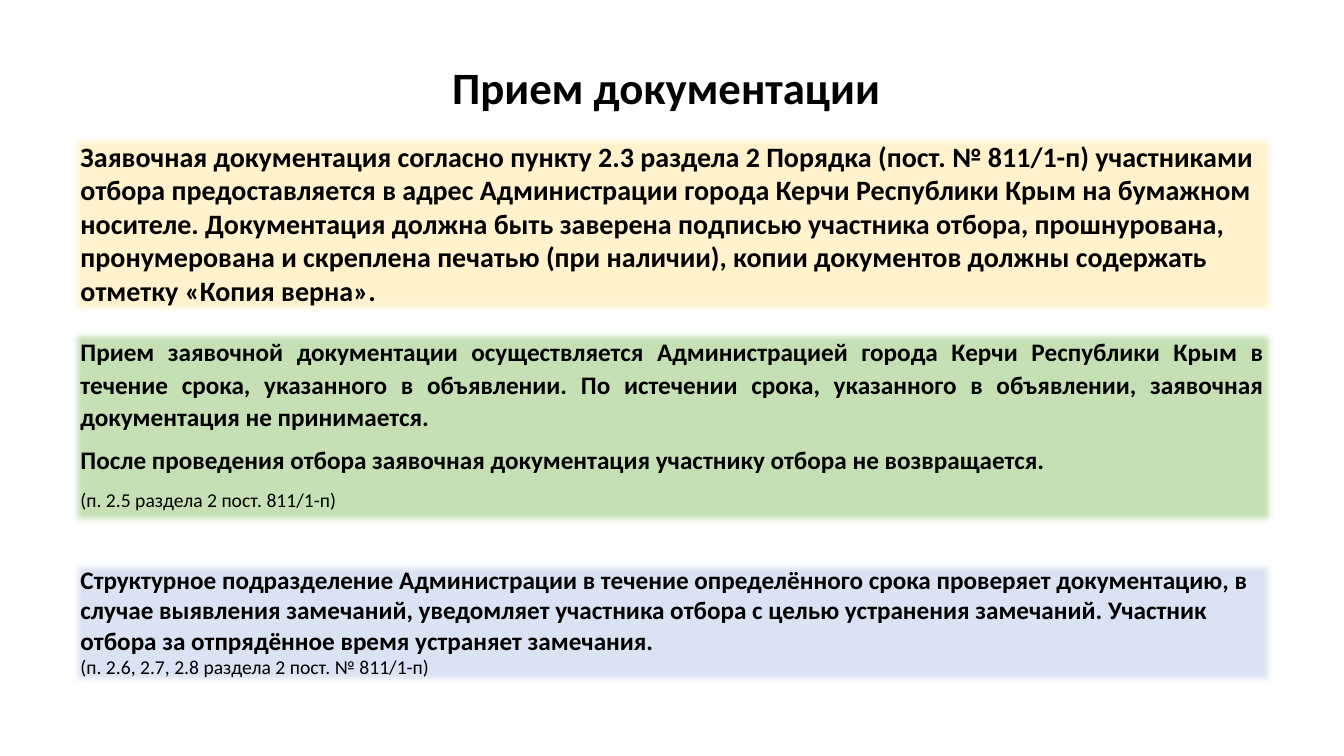
import pptx
import pptx.util
import pptx.dml.color
import pptx.enum.shapes
import pptx.enum.text
import pptx.oxml
import pptx.oxml.ns

Pt = pptx.util.Pt
ALIGN = pptx.enum.text.PP_ALIGN
COLORS = {
    "text": "000000",
    "submission": "FFF2CC",
    "deadline": "C5E0B4",
    "review": "DAE3F3",
}
PANEL_LEFT, PANEL_WIDTH = 50.4, 859.7
SOFT_EDGE = 5
PLAIN = {"line_spacing": 1.0, "space_before": Pt(0), "space_after": Pt(0),
         "alignment": ALIGN.LEFT}
SPACED = {**PLAIN, "line_spacing": 1.07, "space_after": Pt(8)}
JUSTIFIED = {**SPACED, "alignment": ALIGN.JUSTIFY}
CENTERED = {**PLAIN, "alignment": ALIGN.CENTER}

PANELS = [
    ("submission", 95.8, 128.2, [
        ("Заявочная документация согласно пункту 2.3 раздела 2 Порядка "
         "(пост. № 811/1-п) участниками отбора предоставляется в адрес "
         "Администрации города Керчи Республики Крым на бумажном носителе. "
         "Документация должна быть заверена подписью участника отбора, "
         "прошнурована, пронумерована и скреплена печатью (при наличии), "
         "копии документов должны содержать отметку «Копия верна».",
         20, True, PLAIN),
    ]),
    ("deadline", 235.4, 139, [
        ("Прием заявочной документации осуществляется Администрацией города "
         "Керчи Республики Крым в течение срока, указанного в объявлении. "
         "По истечении срока, указанного в объявлении, заявочная "
         "документация не принимается.", 18, True, JUSTIFIED),
        ("После проведения отбора заявочная документация участнику отбора "
         "не возвращается.", 18, True, JUSTIFIED),
        ("(п. 2.5 раздела 2 пост. 811/1-п)", 14, False, SPACED),
    ]),
    ("review", 399.6, 90, [
        ("Структурное подразделение Администрации в течение определённого "
         "срока проверяет документацию, в случае выявления замечаний, "
         "уведомляет участника отбора с целью устранения замечаний. "
         "Участник отбора за отпрядённое время устраняет замечания.",
         18, True, PLAIN),
        ("(п. 2.6, 2.7, 2.8 раздела 2 пост. № 811/1-п)", 14, False, PLAIN),
    ]),
]


def apply(target, values):
    for name, value in values.items():
        setattr(target, name, value)


def rgb(name):
    return pptx.dml.color.RGBColor.from_string(COLORS[name])


def write(frame, paragraphs):
    apply(frame, {
        "word_wrap": True,
        "auto_size": pptx.enum.text.MSO_AUTO_SIZE.NONE,
        "vertical_anchor": pptx.enum.text.MSO_ANCHOR.TOP,
        "margin_left": Pt(7.2), "margin_right": Pt(7.2),
        "margin_top": Pt(3.6), "margin_bottom": Pt(3.6),
    })
    for index, (text, size, bold, layout) in enumerate(paragraphs):
        para = frame.add_paragraph() if index else frame.paragraphs[0]
        apply(para, layout)
        span = para.add_run()
        span.text = text
        apply(span.font, {"name": "Calibri", "size": Pt(size), "bold": bold})
        span.font.color.rgb = rgb("text")


def place_title(page, left, top, width, height):
    title = page.shapes.title
    apply(title, {"left": Pt(left), "top": Pt(top),
                  "width": Pt(width), "height": Pt(height)})
    write(title.text_frame, [("Прием документации", 32, True, CENTERED)])


def soften(box):
    effects = pptx.oxml.parse_xml(
        f'<a:effectLst {pptx.oxml.ns.nsdecls("a")}>'
        f'<a:softEdge rad="{int(Pt(SOFT_EDGE))}"/></a:effectLst>')
    current = box.element.spPr.find(pptx.oxml.ns.qn("a:effectLst"))
    box.element.spPr.replace(current, effects)


def add_panel(page, left, top, width, height, color, paragraphs):
    box = page.shapes.add_shape(pptx.enum.shapes.MSO_SHAPE.RECTANGLE,
                                Pt(left), Pt(top), Pt(width), Pt(height))
    box.fill.solid()
    box.fill.fore_color.rgb = rgb(color)
    box.line.fill.background()
    box.shadow.inherit = False
    soften(box)
    write(box.text_frame, paragraphs)


def main():
    deck = pptx.Presentation()
    apply(deck, {"slide_width": Pt(960), "slide_height": Pt(540)})
    page = deck.slides.add_slide(deck.slide_layouts.get_by_name("Title Only"))
    place_title(page, 310.4, 38.9, 331.2, 46.1)
    for color, top, height, paragraphs in PANELS:
        add_panel(page, PANEL_LEFT, top, PANEL_WIDTH, height, color, paragraphs)
    deck.save("out.pptx")


if __name__ == "__main__":
    main()
